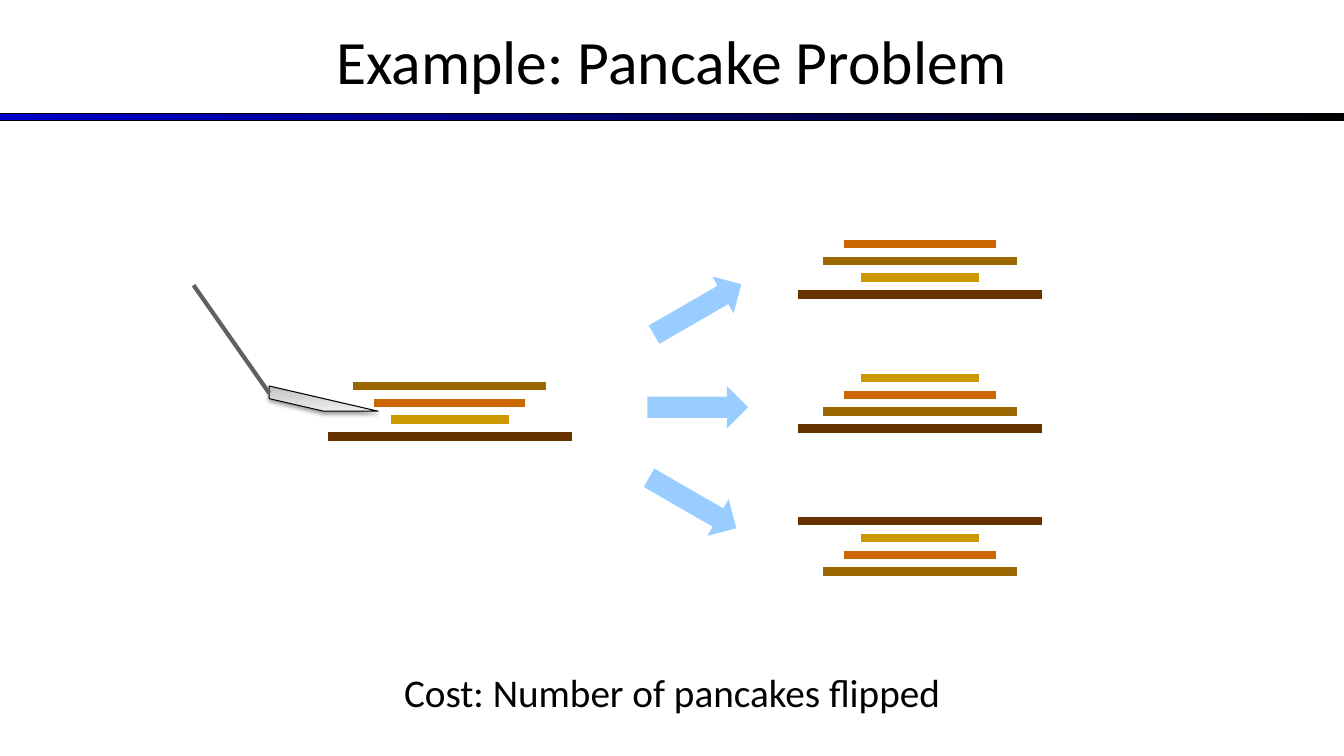
from copy import deepcopy

from lxml import etree
from pptx import Presentation
from pptx.dml.color import RGBColor
from pptx.enum.shapes import MSO_CONNECTOR, MSO_SHAPE
from pptx.enum.text import MSO_ANCHOR, PP_ALIGN
from pptx.oxml.ns import qn
from pptx.util import Inches, Pt

STRAIGHT = MSO_CONNECTOR.STRAIGHT
RECTANGLE, ARROW, STRIPE = MSO_SHAPE.RECTANGLE, MSO_SHAPE.RIGHT_ARROW, MSO_SHAPE.DIAGONAL_STRIPE
CENTER, MIDDLE, TOP = PP_ALIGN.CENTER, MSO_ANCHOR.MIDDLE, MSO_ANCHOR.TOP
WIDTH, HEIGHT = 13.33, 7.5

presentation = Presentation()
presentation.slide_width, presentation.slide_height = Inches(WIDTH), Inches(HEIGHT)
slide = presentation.slides.add_slide(presentation.slide_layouts[6])
shapes = slide.shapes


def color(value):
    return RGBColor.from_string(value)


def add_line(x1, y1, x2, y2, line_color, weight):
    line = shapes.add_connector(STRAIGHT, Inches(x1), Inches(y1), Inches(x2), Inches(y2))
    line.line.color.rgb = color(line_color)
    line.line.width = Pt(weight)
    etree.SubElement(line._element.spPr, qn("a:effectLst"))


# Rule under the title and spatula blade, both with gradients
for kind, left, top, width, height, start, end, angle in (
    (RECTANGLE, 0, 1.13, WIDTH, 0.07, "0000CC", "000000", 0),
    (STRIPE, 2.67, 3.83, 1.08, 0.25, "BDBDBD", "EEEEEE", 90),
):
    shape = shapes.add_shape(kind, Inches(left), Inches(top), Inches(width), Inches(height))
    shape.shadow.inherit = False
    shape.fill.gradient()
    shape.fill.gradient_angle = angle
    for stop, value in zip(shape.fill.gradient_stops, (start, end)):
        stop.color.rgb = color(value)
    shape.line.color.rgb = color("000000")
    shape.line.width = Pt(0.75)

# The blade is mirrored, has a middle gradient stop and a soft shadow
blade = shape
properties = blade._element.spPr
properties.find(qn("a:xfrm")).set("flipV", "1")
first_stop = properties.find(".//" + qn("a:gs"))
first_stop.addnext(deepcopy(first_stop))
middle_stop = blade.fill.gradient_stops[1]
middle_stop.position = 0.35
middle_stop.color.rgb = color("D1D1D1")
shadow = etree.SubElement(properties.find(qn("a:effectLst")), qn("a:outerShdw"),
                          blurRad=str(Pt(3.1)), dist=str(Pt(1.6)), dir="5400000", rotWithShape="0")
shadow_color = etree.SubElement(shadow, qn("a:srgbClr"), val="000000")
etree.SubElement(shadow_color, qn("a:alpha"), val="38000")

# Spatula handle
add_line(2.67, 3.9, 1.92, 2.83, "606060", 3)

# Pancake stacks: sizes from top to bottom, 1 is the smallest
PANCAKES = {1: (1.17, "CC9900"), 2: (1.5, "CC6600"), 3: (1.92, "996600"), 4: (2.42, "663300")}
PANCAKE_STEP = 1 / 6
for center, top, order in (
    (4.46, 3.83, (3, 2, 1, 4)),
    (9.125, 2.42, (2, 3, 1, 4)),
    (9.125, 3.75, (1, 2, 3, 4)),
    (9.125, 5.17, (4, 1, 2, 3)),
):
    for row, size in enumerate(order):
        width, pancake_color = PANCAKES[size]
        y = top + row * PANCAKE_STEP
        add_line(center - width / 2, y, center + width / 2, y, pancake_color, 6)

# Arrows to the possible results
for left, top, rotation in ((6.42, 2.86, 330), (6.42, 3.83, 0), (6.37, 4.78, 30)):
    arrow = shapes.add_shape(ARROW, Inches(left), Inches(top), Inches(1), Inches(0.42))
    arrow.rotation = rotation
    arrow.shadow.inherit = False
    arrow.fill.solid()
    arrow.fill.fore_color.rgb = color("99CCFF")
    arrow.line.fill.background()

# Title and caption
for text, top, height, size, anchor in (
    ("Example: Pancake Problem", -0.03, 1.25, 44, MIDDLE),
    ("Cost: Number of pancakes flipped", 6.58, 0.57, 28, TOP),
):
    box = shapes.add_textbox(0, Inches(top), Inches(WIDTH), Inches(height))
    frame = box.text_frame
    frame.word_wrap = True
    frame.vertical_anchor = anchor
    paragraph = frame.paragraphs[0]
    paragraph.text = text
    paragraph.alignment = CENTER
    paragraph.font.name = "Calibri"
    paragraph.font.size = Pt(size)
    paragraph.font.color.rgb = color("000000")

presentation.save("out.pptx")
